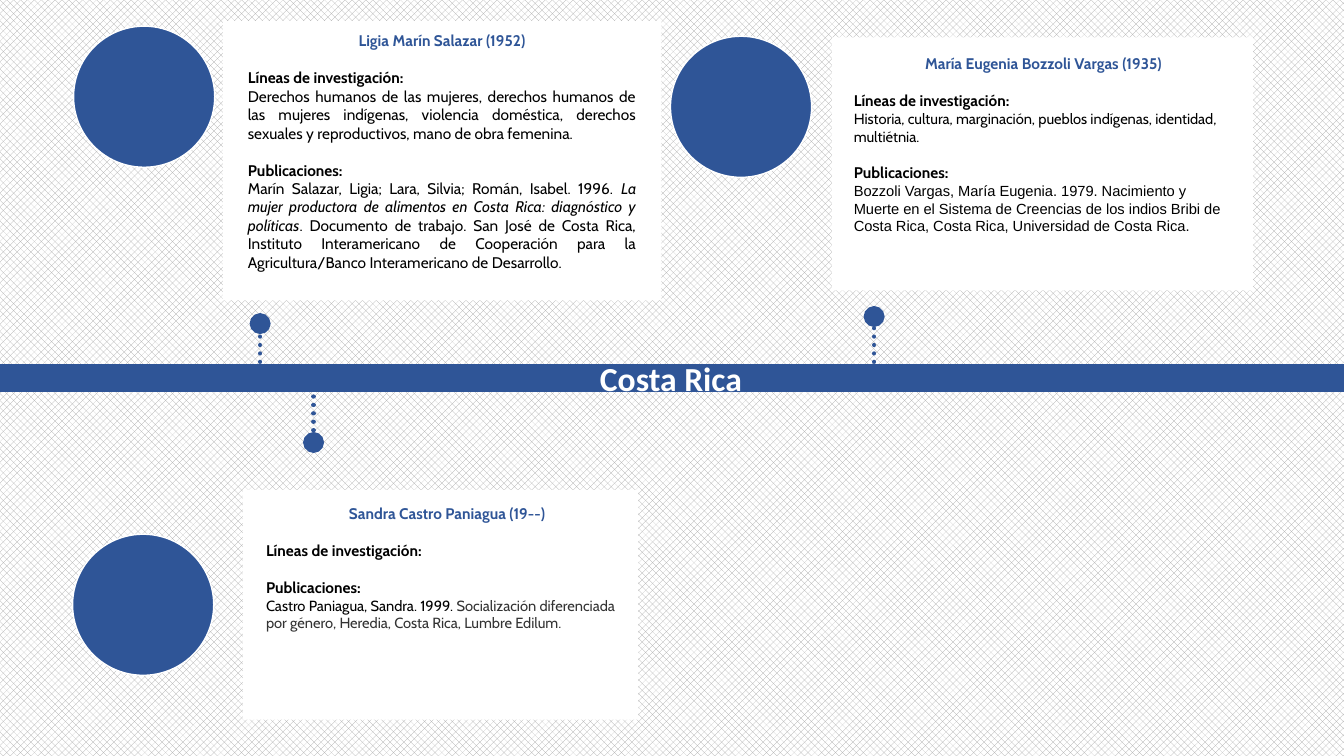
from dataclasses import dataclass

from lxml import etree
from pptx import Presentation, util as u
from pptx.dml.color import RGBColor
from pptx.enum import dml, shapes, text
from pptx.oxml.ns import qn

PX = 9144  # 100 px to the inch
WIDTH, HEIGHT = 1333, 750
BAND_Y = 375
PORTRAIT_SIZE = 140
BLUE, WHITE, BLACK, GREY, DARK = "2F5597", "FFFFFF", "000000", "A6A6A6", "333333"
HEADING_SIZE = 11
HEADING_GAP = 13.2


@dataclass(frozen=True)
class Box:
    left: int
    top: int
    width: int
    height: int

    def emu(self) -> tuple[int, ...]:
        return tuple(v * PX for v in (self.left, self.top, self.width, self.height))


@dataclass(frozen=True)
class Part:
    words: str
    italic: bool = False
    color: str = BLACK


@dataclass(frozen=True)
class Researcher:
    name: str
    research: str
    publication: list[Part]
    card: Box
    words: Box
    portrait: tuple[int, int]
    pin: tuple[int, int, int]  # x, start y, end y
    size: float = 10.5
    publication_font: str = "Cabin"
    align: text.PP_ALIGN = text.PP_ALIGN.LEFT


RESEARCHERS = [
    Researcher(
        "Ligia Marín Salazar (1952)",
        "Derechos humanos de las mujeres, derechos humanos de las mujeres indígenas, "
        "violencia doméstica, derechos sexuales y reproductivos, mano de obra femenina.",
        [Part("Marín Salazar, Ligia; Lara, Silvia; Román, Isabel. 1996. "),
         Part("La mujer productora de alimentos en Costa Rica: diagnóstico y políticas",
              italic=True),
         Part(". Documento de trabajo. San José de Costa Rica, Instituto Interamericano "
              "de Cooperación para la Agricultura/Banco Interamericano de Desarrollo.")],
        Box(221, 21, 435, 277), Box(236, 26, 405, 268), (73, 26), (258, 359, 321),
        size=11, align=text.PP_ALIGN.JUSTIFY),
    Researcher(
        "Sandra Castro Paniagua (19--)",
        "",
        [Part("Castro Paniagua, Sandra. 1999. "),
         Part("Socialización diferenciada por género, Heredia, Costa Rica, Lumbre Edilum.",
              color=DARK)],
        Box(241, 486, 392, 228), Box(254, 495, 379, 156), (72, 530), (311, 385, 439)),
    Researcher(
        "María Eugenia Bozzoli Vargas (1935)",
        "Historia, cultura, marginación, pueblos indígenas, identidad, multiétnia.",
        [Part("Bozzoli Vargas, María Eugenia. 1979. Nacimiento y Muerte en el Sistema de "
              "Creencias de los indios Bribi de Costa Rica, Costa Rica, "
              "Universidad de Costa Rica.")],
        Box(825, 37, 418, 251), Box(837, 49, 396, 191), (665, 36), (867, 359, 314),
        publication_font="Arial"),
]


def rgb(color: str) -> RGBColor:
    return RGBColor.from_string(color)


def style(run, size: float, color: str, bold: bool = False, italic: bool = False,
          font: str = "Cabin") -> None:
    run.font.name, run.font.size = font, u.Pt(size)
    run.font.bold, run.font.italic = bold, italic
    run.font.color.rgb = rgb(color)


def add_line(slide, x1: int, y1: int, x2: int, y2: int, points: float):
    line = slide.shapes.add_connector(shapes.MSO_CONNECTOR.STRAIGHT,
                                      x1 * PX, y1 * PX, x2 * PX, y2 * PX)
    line.line.color.rgb = rgb(BLUE)
    line.line.width = u.Pt(points)
    etree.SubElement(line.element.spPr, qn("a:effectLst"))
    return line


def add_pin(slide, x: int, start: int, end: int) -> None:
    """Dotted stem that ends in a round head."""
    stem = add_line(slide, x, start, x, end, 3)
    stem.line.dash_style = dml.MSO_LINE.ROUND_DOT
    ln = stem.element.spPr.find(qn("a:ln"))
    ln.set("cap", "rnd")
    etree.SubElement(ln, qn("a:tailEnd"), type="oval", w="lg", len="lg")


def add_filled(slide, preset: shapes.MSO_SHAPE, box: Box, fill: str):
    shape = slide.shapes.add_shape(preset, *box.emu())
    shape.shadow.inherit = False
    shape.fill.solid()
    shape.fill.fore_color.rgb = rgb(fill)
    shape.line.fill.background()
    return shape


def add_paragraph(frame, parts: list[Part], align: text.PP_ALIGN, size: float,
                  bold: bool = False, font: str = "Cabin", gap: float = 0) -> None:
    paragraph = frame.add_paragraph()
    paragraph.alignment = align
    paragraph.space_before = u.Pt(gap)
    for part in parts:
        run = paragraph.add_run()
        run.text = part.words
        style(run, size, part.color, bold, part.italic, font)


def add_biography(slide, person: Researcher) -> None:
    frame = slide.shapes.add_textbox(*person.words.emu()).text_frame
    frame.word_wrap = True
    frame.auto_size = text.MSO_AUTO_SIZE.SHAPE_TO_FIT_TEXT
    name = frame.paragraphs[0]
    name.text = person.name
    name.alignment = text.PP_ALIGN.CENTER
    style(name.runs[0], HEADING_SIZE, BLUE, bold=True)

    sections = [("Líneas de investigación:", [Part(person.research)], "Cabin"),
                ("Publicaciones:", person.publication, person.publication_font)]
    for heading, parts, font in sections:
        add_paragraph(frame, [Part(heading)], text.PP_ALIGN.LEFT, HEADING_SIZE,
                      bold=True, gap=HEADING_GAP)
        if parts[0].words:
            add_paragraph(frame, parts, person.align, person.size, font=font)


def add_researcher(slide, person: Researcher) -> None:
    add_pin(slide, *person.pin)
    add_filled(slide, shapes.MSO_SHAPE.RECTANGLE, person.card, WHITE)
    add_biography(slide, person)
    portrait = add_filled(slide, shapes.MSO_SHAPE.OVAL,
                          Box(*person.portrait, PORTRAIT_SIZE, PORTRAIT_SIZE), BLUE)
    portrait.line.color.rgb = rgb(WHITE)
    portrait.line.width = u.Pt(1)


def set_country(slide, country: str) -> None:
    """Title on top of the band across the slide."""
    title = slide.shapes.title
    title.left, title.top, title.width, title.height = Box(585, 350, 200, 50).emu()
    frame = title.text_frame
    frame.text = country
    frame.vertical_anchor = text.MSO_ANCHOR.TOP
    frame.auto_size = text.MSO_AUTO_SIZE.SHAPE_TO_FIT_TEXT
    frame.paragraphs[0].alignment = text.PP_ALIGN.LEFT
    style(frame.paragraphs[0].runs[0], 24, WHITE, bold=True, font="Calibri")
    band = add_line(slide, 0, BAND_Y, WIDTH, BAND_Y, 20)
    title.element.addprevious(band.element)


def main() -> None:
    deck = Presentation()
    deck.slide_width, deck.slide_height = WIDTH * PX, HEIGHT * PX
    slide = deck.slides.add_slide(deck.slide_layouts.get_by_name("Title Only"))
    backdrop = slide.background.fill
    backdrop.patterned()
    backdrop.pattern = dml.MSO_PATTERN.PERCENT_50
    backdrop.fore_color.rgb = rgb(GREY)
    backdrop.back_color.rgb = rgb(WHITE)
    set_country(slide, "Costa Rica")
    for person in RESEARCHERS:
        add_researcher(slide, person)
    deck.save("out.pptx")


if __name__ == "__main__":
    main()
